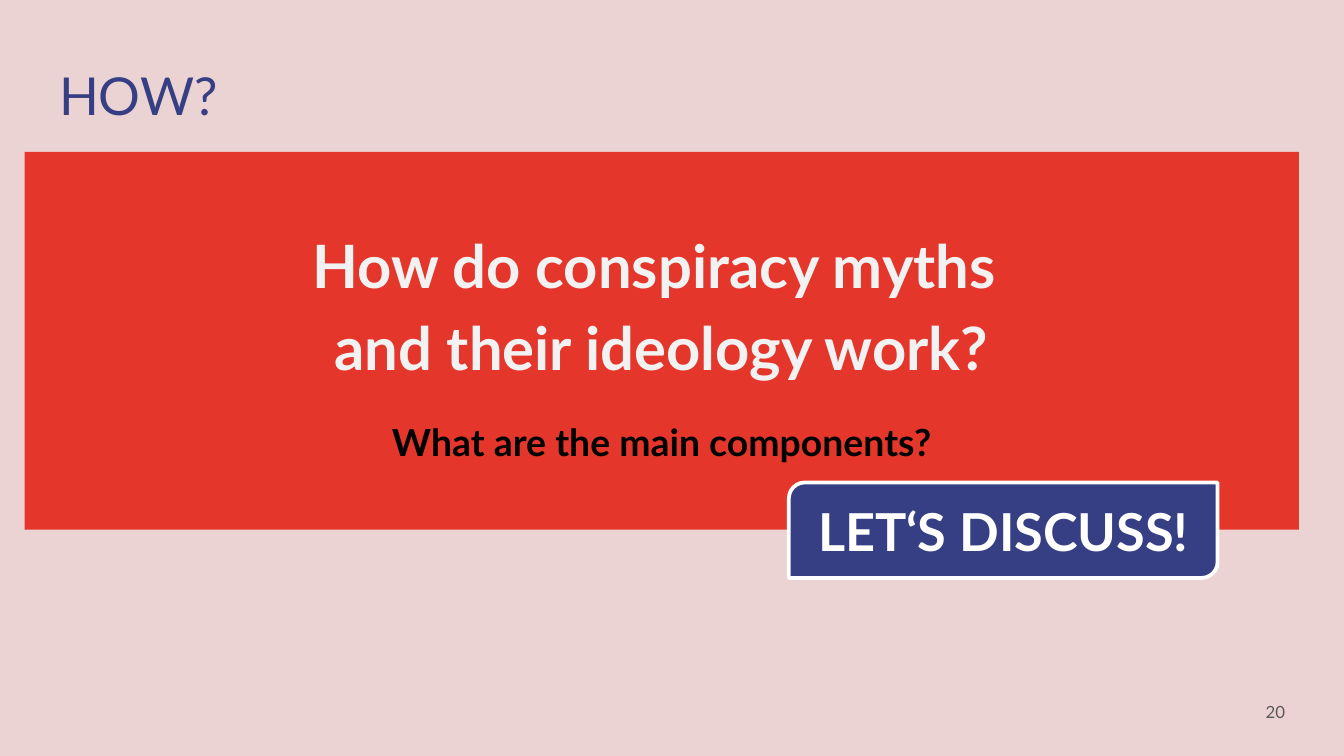
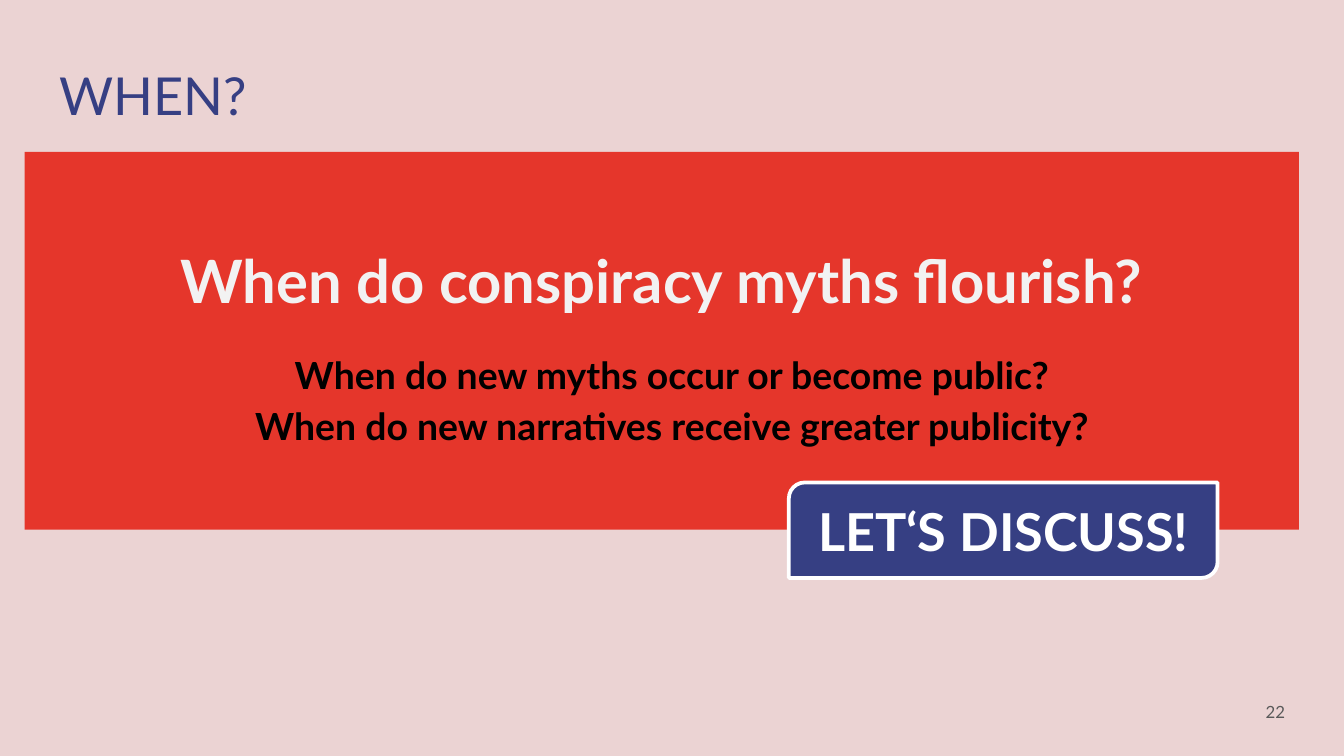
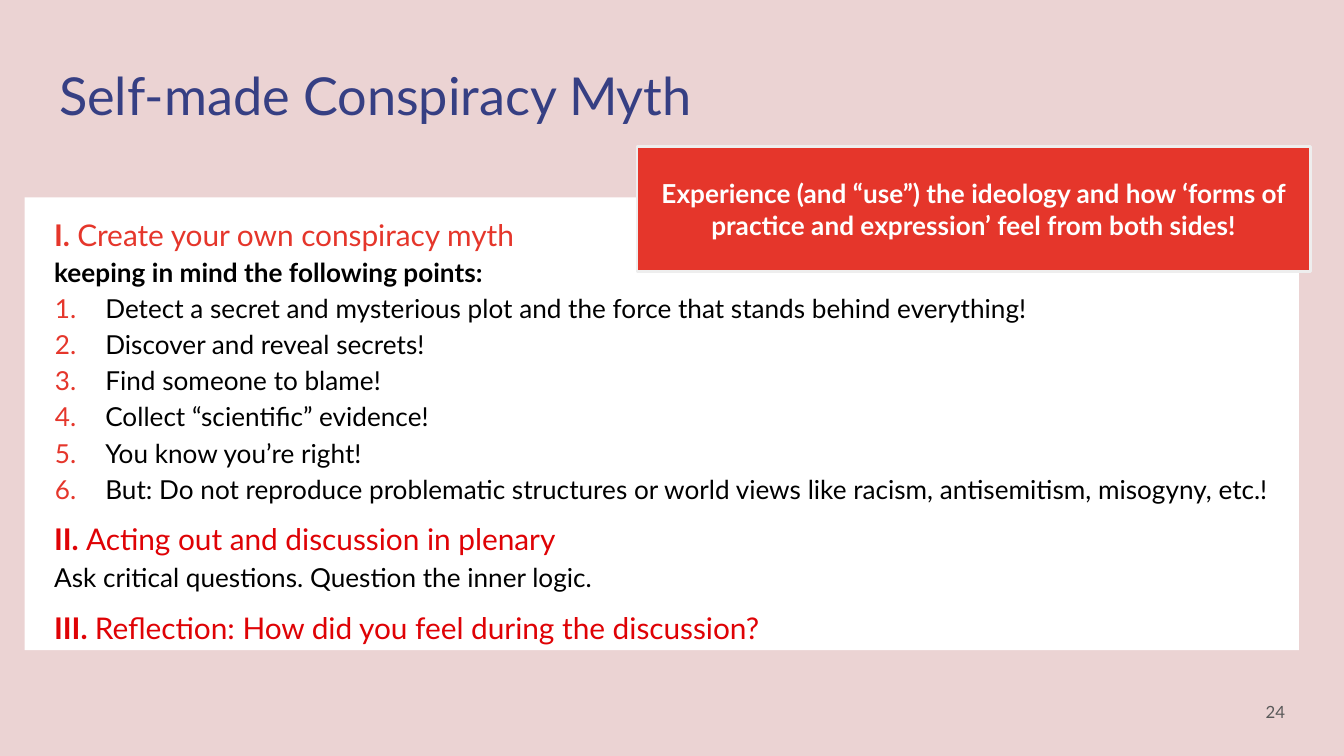
import pptx
import pptx.util
import pptx.dml.color
import pptx.enum.shapes
import pptx.enum.text
import pptx.oxml.ns
import lxml.etree

Pt = pptx.util.Pt
Form = pptx.enum.shapes.MSO_SHAPE
Side = pptx.enum.text.PP_ALIGN
Hold = pptx.enum.text.MSO_ANCHOR

# Shared look
FONT = "Lato"
ROSE, RED, DEEP, BLUE = "EBD3D3", "E5362B", "DF0205", "363F83"
WHITE, PALE, EDGE, BLACK, GREY = "FFFFFF", "F2F2F2", "EEEEEE", "000000", "595959"

# Boxes: left, top, width, height
TITLE = (24.5, 26.6, 535.7, 45.4)
BAND = (13.2, 81.4, 682.6, 202.3)
SHEET = (13.2, 105.8, 682.6, 242.6)
PAGE = (652.3, 365.8, 43.2, 31)
BADGE = (422.6, 258.5, 229.7, 51.1)
NOTE = (341.3, 78.5, 360.7, 67)

# Paragraph styles
STYLES = {
    "ask": dict(size=32, color=PALE, bold=True, align=Side.CENTER, after=16),
    "sub": dict(size=20, color=BLACK, bold=True, align=Side.CENTER, after=16),
    "pair": dict(size=20, color=BLACK, bold=True, align=Side.CENTER, left=11),
    "first": dict(size=16, color=RED, left=8.6),
    "lead": dict(size=14, color=BLACK, bold=True, left=8.6),
    "step": dict(size=14, color=BLACK, left=36, hang=27),
    "part": dict(size=16, color=DEEP, left=8.6, before=6),
    "plain": dict(size=14, color=BLACK, left=8.6, after=6),
    "last": dict(size=16, color=DEEP, left=8.6),
}

# Content: each line is style, text and, for headings, a bold mark
CALL = "LET‘S DISCUSS!"
SLIDES = [
    dict(title="HOW?", page="20", badge=CALL, lines=[
        ("ask", "How do conspiracy myths \vand their ideology work?"),
        ("sub", "What are the main components?"),
    ]),
    dict(title="WHEN?", page="22", badge=CALL, lines=[
        ("ask", "When do conspiracy myths flourish?"),
        ("pair", "When do new myths occur or become public?"),
        ("pair", "When do new narratives receive greater publicity?"),
    ]),
    dict(
        title="Self-made Conspiracy Myth", page="24",
        note="Experience (and “use”) the ideology and how ‘forms of "
             "practice and expression’ feel from both sides!",
        lines=[
            ("first", "Create your own conspiracy myth", "I. "),
            ("lead", "keeping in mind the following points:"),
            ("step", "Detect a secret and mysterious plot and the force "
                     "that stands behind everything!"),
            ("step", "Discover and reveal secrets!"),
            ("step", "Find someone to blame!"),
            ("step", "Collect “scientific” evidence!"),
            ("step", "You know you’re right!"),
            ("step", "But: Do not reproduce problematic structures or world "
                     "views like racism, antisemitism, misogyny, etc.!"),
            ("part", "Acting out and discussion in plenary", "II. "),
            ("plain", "Ask critical questions. Question the inner logic."),
            ("last", "Reflection: How did you feel during the discussion?",
             "III. "),
        ],
    ),
]


def tint(code):
    return pptx.dml.color.RGBColor.from_string(code)


def paint(shape, fill, line=None, width=0):
    shape.fill.solid()
    shape.fill.fore_color.rgb = tint(fill)
    if line:
        shape.line.color.rgb = tint(line)
        shape.line.width = Pt(width)


def place(shape, box, anchor, pad=7.2):
    shape.left, shape.top, shape.width, shape.height = map(Pt, box)
    frame = shape.text_frame
    frame.word_wrap = True
    frame.auto_size = pptx.enum.text.MSO_AUTO_SIZE.NONE
    frame.vertical_anchor = anchor
    frame.margin_left = frame.margin_right = Pt(7.2)
    frame.margin_top = frame.margin_bottom = Pt(pad)


def style(para, size, color, bold=False, align=Side.LEFT):
    para.alignment = align
    for run in para.runs:
        run.font.name = FONT
        run.font.size = Pt(size)
        run.font.bold = bold
        run.font.color.rgb = tint(color)


def label(shape, text, size, color, bold=False, align=Side.LEFT):
    shape.text_frame.text = text
    style(shape.text_frame.paragraphs[0], size, color, bold, align)


def bullet(para, left, hang):
    """Set the indent, with red numbers where the text hangs."""
    props = para._p.get_or_add_pPr()
    props.set("marL", str(Pt(left)))
    props.set("indent", str(-Pt(hang)))

    def add(node, tag, **attrs):
        return lxml.etree.SubElement(node, pptx.oxml.ns.qn(tag), attrs)

    if hang:
        add(add(props, "a:buClr"), "a:srgbClr", val=RED)
        add(props, "a:buFont", typeface=FONT)
        add(props, "a:buAutoNum", type="arabicPeriod")
    else:
        add(props, "a:buNone")


def write(frame, lines):
    for index, (kind, text, *mark) in enumerate(lines):
        look = dict(STYLES[kind])
        para = frame.add_paragraph() if index else frame.paragraphs[0]
        para.line_spacing = 1.15
        para.space_before = Pt(look.pop("before", 0))
        para.space_after = Pt(look.pop("after", 0))
        bullet(para, look.pop("left", 0), look.pop("hang", 0))
        para.text = mark[0] if mark else text
        if mark:
            para.add_run().text = text
        style(para, **look)
        if mark:
            para.runs[0].font.bold = True


def block(slide, form, box, fill, line, width, pad):
    shape = slide.shapes.add_shape(form, *map(Pt, box))
    shape.shadow.inherit = False
    paint(shape, fill, line, width)
    place(shape, box, Hold.MIDDLE, pad)
    return shape


def build(deck, data):
    slide = deck.slides.add_slide(deck.slide_layouts[1])
    title, body = slide.placeholders

    # Title and body
    place(title, TITLE, Hold.TOP)
    label(title, data["title"], 28, BLUE)
    asks = "badge" in data
    place(body, BAND if asks else SHEET, Hold.MIDDLE if asks else Hold.TOP)
    paint(body, RED if asks else WHITE)
    write(body.text_frame, data["lines"])

    # Page number
    page = slide.shapes.add_textbox(*map(Pt, PAGE))
    place(page, PAGE, Hold.MIDDLE)
    label(page, data["page"], 9, GREY, align=Side.RIGHT)

    # Badge or note on top of the body
    if asks:
        badge = block(slide, Form.ROUND_2_DIAG_RECTANGLE, BADGE,
                      BLUE, WHITE, 2, 3.6)
        label(badge, data["badge"], 28, WHITE, True, Side.CENTER)
    else:
        note = block(slide, Form.RECTANGLE, NOTE, RED, EDGE, 1.5, 7.2)
        label(note, data["note"], 14, WHITE, True, Side.CENTER)


def main():
    deck = pptx.Presentation()
    deck.slide_width, deck.slide_height = Pt(720), Pt(405)
    ground = deck.slide_master.background.fill
    ground.solid()
    ground.fore_color.rgb = tint(ROSE)
    for data in SLIDES:
        build(deck, data)
    deck.save("out.pptx")


if __name__ == "__main__":
    main()
